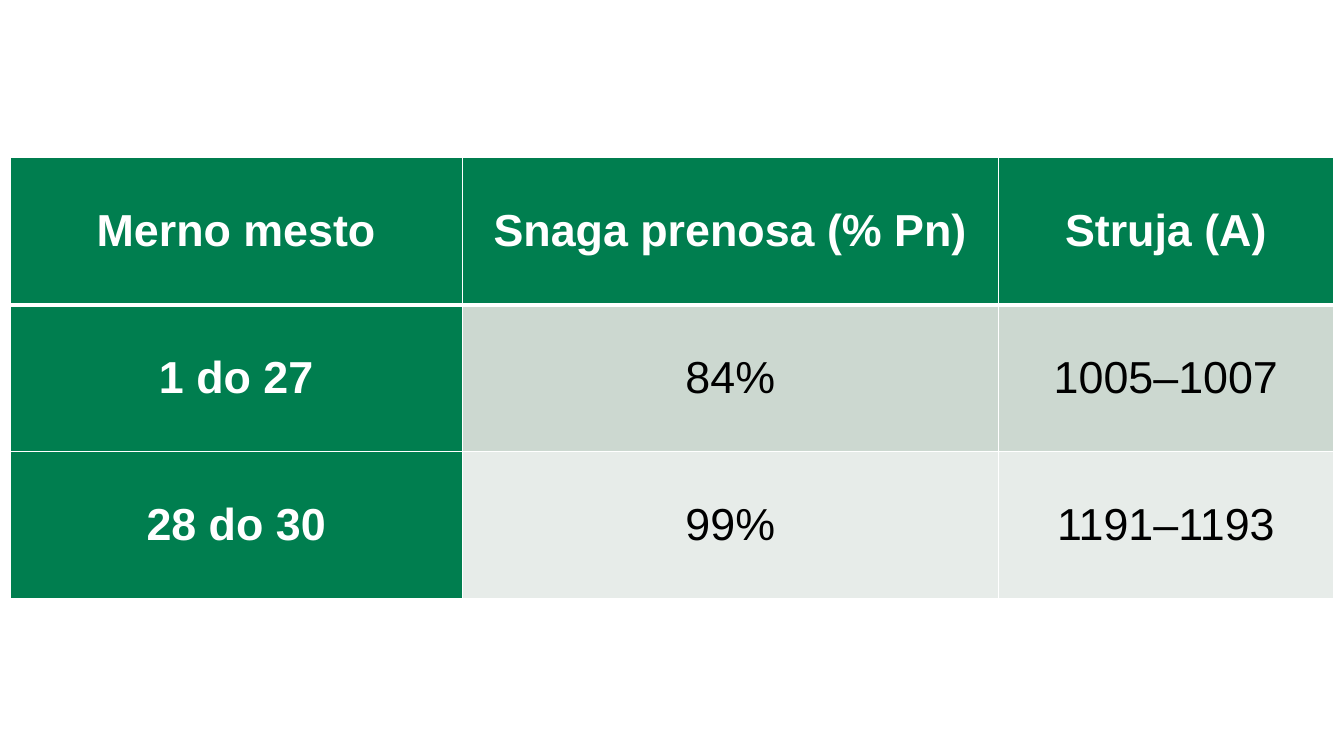
from dataclasses import dataclass

from lxml.etree import SubElement
from pptx import Presentation
from pptx.dml.color import RGBColor
from pptx.enum.text import MSO_ANCHOR as Anchor, PP_ALIGN as Align
from pptx.oxml.ns import qn
from pptx.table import _Cell as Cell
from pptx.util import Pt


@dataclass(frozen=True)
class Theme:
    font: str = "Arial"
    size: float = 32
    green: str = "007E4F"
    sage: str = "CCD8D0"
    mist: str = "E7ECE9"
    white: str = "FFFFFF"
    black: str = "000000"
    thin_rule: float = 1
    header_rule: float = 3
    cell_margin: float = 1.44


@dataclass(frozen=True)
class Measurement:
    place: str
    power: str
    current: str
    band: str


THEME = Theme()
HEADINGS = ("Merno mesto", "Snaga prenosa (% Pn)", "Struja (A)")
MEASUREMENTS = (
    Measurement("1 do 27", "84%", "1005–1007", THEME.sage),
    Measurement("28 do 30", "99%", "1191–1193", THEME.mist),
)
COLUMN_WIDTHS = (323.1, 382.8, 239.5)
ROW_HEIGHT = 105.1
TABLE_LEFT, TABLE_TOP = 7.2, 112.6


def write_text(cell: Cell, text: str, *, color: str, bold: bool) -> None:
    paragraph = cell.text_frame.paragraphs[0]
    paragraph.alignment = Align.CENTER
    run = paragraph.add_run()
    run.text = text
    run.font.name = THEME.font
    run.font.size = Pt(THEME.size)
    run.font.bold = bold
    run.font.color.rgb = RGBColor.from_string(color)


def draw_borders(cell: Cell, top: float, bottom: float) -> None:
    properties = cell._tc.get_or_add_tcPr()
    widths = {"lnL": THEME.thin_rule, "lnR": THEME.thin_rule, "lnT": top, "lnB": bottom}
    for edge, width in widths.items():
        line = SubElement(properties, qn(f"a:{edge}"), w=str(Pt(width)))
        fill = SubElement(line, qn("a:solidFill"))
        SubElement(fill, qn("a:srgbClr"), val=THEME.white)


def format_cell(cell: Cell, text: str, row: int, fill: str, *, heading: bool) -> None:
    cell.margin_left = cell.margin_right = Pt(THEME.cell_margin)
    cell.margin_top = cell.margin_bottom = Pt(THEME.cell_margin)
    cell.vertical_anchor = Anchor.MIDDLE
    draw_borders(
        cell,
        top=THEME.header_rule if row == 1 else THEME.thin_rule,
        bottom=THEME.header_rule if row == 0 else THEME.thin_rule,
    )
    cell.fill.solid()
    cell.fill.fore_color.rgb = RGBColor.from_string(fill)
    write_text(cell, text, color=THEME.white if heading else THEME.black, bold=heading)


def main() -> None:
    deck = Presentation()
    deck.slide_width, deck.slide_height = Pt(960), Pt(540)
    slide = deck.slides.add_slide(deck.slide_layouts[6])

    row_count = len(MEASUREMENTS) + 1
    measurements = slide.shapes.add_table(
        row_count, len(HEADINGS), Pt(TABLE_LEFT), Pt(TABLE_TOP),
        Pt(sum(COLUMN_WIDTHS)), Pt(ROW_HEIGHT * row_count),
    ).table
    measurements.first_col = True
    for column, width in zip(measurements.columns, COLUMN_WIDTHS):
        column.width = Pt(width)
    for row in measurements.rows:
        row.height = Pt(ROW_HEIGHT)

    for column, text in enumerate(HEADINGS):
        format_cell(measurements.cell(0, column), text, 0, THEME.green, heading=True)
    for row, entry in enumerate(MEASUREMENTS, start=1):
        for column, text in enumerate((entry.place, entry.power, entry.current)):
            heading = column == 0
            fill = THEME.green if heading else entry.band
            format_cell(measurements.cell(row, column), text, row, fill, heading=heading)

    deck.save("out.pptx")


if __name__ == "__main__":
    main()
